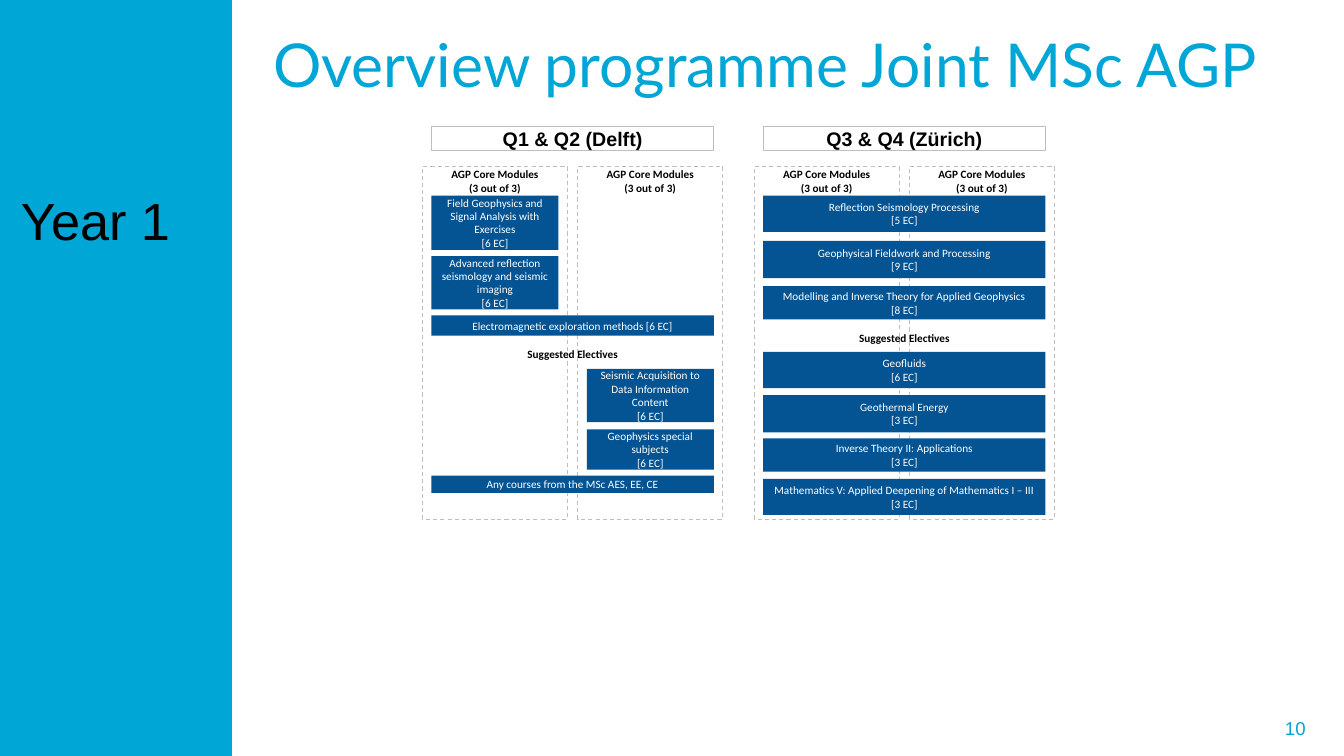
from dataclasses import dataclass

import pptx
import pptx.dml.color
import pptx.enum.dml
import pptx.enum.shapes
import pptx.enum.text
import pptx.util

WIDTH, HEIGHT = 13.33, 7.5
ROW = HEIGHT / 75
COLUMN_LEFTS = (4.19, 5.73, 7.48, 9.02)
COLUMN_WIDTH = 1.44
PADDING = 0.09
CYAN, NAVY, GREY = "00A6D6", "045493", "BEBEBE"
BLACK, WHITE = "000000", "FFFFFF"
ALIGN = pptx.enum.text.PP_ALIGN
ANCHOR = pptx.enum.text.MSO_ANCHOR


@dataclass(frozen=True)
class Semester:
    name: str
    column: int
    electives_row: float


@dataclass(frozen=True)
class Module:
    text: str
    column: int
    span: int
    row: float
    rows: float


SEMESTERS = [
    Semester("Q1 & Q2 (Delft)", 0, 34),
    Semester("Q3 & Q4 (Zürich)", 2, 32.4),
]

MODULES = [
    Module("Field Geophysics and Signal Analysis with Exercises\n[6 EC]", 0, 1, 19.4, 5.4),
    Module("Advanced reflection seismology and seismic imaging\n[6 EC]", 0, 1, 25.4, 5.3),
    Module("Electromagnetic exploration methods [6 EC]", 0, 2, 31.3, 2),
    Module("Seismic Acquisition to Data Information Content\n[6 EC]", 1, 1, 36.6, 5.3),
    Module("Geophysics special subjects\n[6 EC]", 1, 1, 42.6, 4),
    Module("Any courses from the MSc AES, EE, CE", 0, 2, 47.2, 1.7),
    Module("Reflection Seismology Processing\n[5 EC]", 2, 2, 19.4, 3.6),
    Module("Geophysical Fieldwork and Processing\n[9 EC]", 2, 2, 23.9, 3.7),
    Module("Modelling and Inverse Theory for Applied Geophysics\n[8 EC]", 2, 2, 28.4, 3.3),
    Module("Geofluids\n[6 EC]", 2, 2, 34.9, 3.6),
    Module("Geothermal Energy\n[3 EC]", 2, 2, 39.2, 3.7),
    Module("Inverse Theory II: Applications\n[3 EC]", 2, 2, 43.5, 3.3),
    Module("Mathematics V: Applied Deepening of Mathematics I – III\n[3 EC]", 2, 2, 47.5, 3.6),
]

prs = pptx.Presentation()
prs.slide_width = pptx.util.Inches(WIDTH)
prs.slide_height = pptx.util.Inches(HEIGHT)
slide = prs.slides.add_slide(prs.slide_layouts[6])


def rgb(value: str) -> pptx.dml.color.RGBColor:
    return pptx.dml.color.RGBColor.from_string(value)


def inches(box: tuple) -> list:
    return [pptx.util.Inches(length) for length in box]


def cell(column: int, span: int, row: float, rows: float, padding: float = PADDING) -> tuple:
    left = COLUMN_LEFTS[column] + padding
    right = COLUMN_LEFTS[column + span - 1] + COLUMN_WIDTH - padding
    return left, row * ROW, right - left, rows * ROW


def add_rect(box: tuple, fill: str | None = None, line: str | None = None, dashed: bool = False):
    sp = slide.shapes.add_shape(pptx.enum.shapes.MSO_SHAPE.RECTANGLE, *inches(box))
    sp.shadow.inherit = False
    if fill:
        sp.fill.solid()
        sp.fill.fore_color.rgb = rgb(fill)
    else:
        sp.fill.background()
    if line:
        sp.line.color.rgb = rgb(line)
        sp.line.width = pptx.util.Pt(0.75)
        if dashed:
            sp.line.dash_style = pptx.enum.dml.MSO_LINE.DASH
    else:
        sp.line.fill.background()
    return sp


def add_label(box: tuple):
    return slide.shapes.add_textbox(*inches(box))


def write(sp, text: str, *, size: float = 8, font: str = "Calibri", color: str = BLACK,
          bold: bool = False, align=ALIGN.CENTER, anchor=ANCHOR.MIDDLE,
          inset: tuple = (0.05, 0)) -> None:
    tf = sp.text_frame
    tf.word_wrap = True
    tf.vertical_anchor = anchor
    tf.margin_left = tf.margin_right = pptx.util.Inches(inset[0])
    tf.margin_top = tf.margin_bottom = pptx.util.Inches(inset[1])
    for i, line in enumerate(text.split("\n")):
        p = tf.paragraphs[0] if i == 0 else tf.add_paragraph()
        p.alignment = align
        r = p.add_run()
        r.text = line
        r.font.size = pptx.util.Pt(size)
        r.font.name = font
        r.font.bold = bold
        r.font.color.rgb = rgb(color)


def add_semester(semester: Semester) -> None:
    first = semester.column
    header = add_rect(cell(first, 2, 12.6, 2.3), WHITE, GREY)
    write(header, semester.name, size=14, font="Arial", bold=True)
    for column in (first, first + 1):
        add_rect(cell(column, 1, 16.5, 35, 0), line=GREY, dashed=True)
        write(add_label(cell(column, 1, 16.8, 2.3)), "AGP Core Modules\n(3 out of 3)", bold=True)
    electives = add_label(cell(first, 2, semester.electives_row, 2.3))
    write(electives, "Suggested Electives", bold=True)


def add_module(module: Module) -> None:
    sp = add_rect(cell(module.column, module.span, module.row, module.rows), NAVY)
    write(sp, module.text, color=WHITE)


def main() -> None:
    add_rect((0, 0, 2.3, HEIGHT), CYAN)
    write(add_label((2.61, 0, 10.36, 12.5 * ROW)), "Overview programme Joint MSc AGP",
          size=43.2, font="Lato", color=CYAN, align=ALIGN.LEFT, inset=(0.1, 0.05))
    write(add_label((0.11, 17.7 * ROW, 2.71, 50.8 * ROW)), "Year 1", size=37.3,
          font="Arial", align=ALIGN.LEFT, anchor=ANCHOR.TOP, inset=(0.1, 0.1))
    for semester in SEMESTERS:
        add_semester(semester)
    for module in MODULES:
        add_module(module)
    write(add_label((9.7, 70.2 * ROW, 3.38, 4 * ROW)), "10", size=13.3, font="Arial",
          color=CYAN, align=ALIGN.RIGHT, inset=(0.13, 0.07))
    prs.save("out.pptx")


if __name__ == "__main__":
    main()
